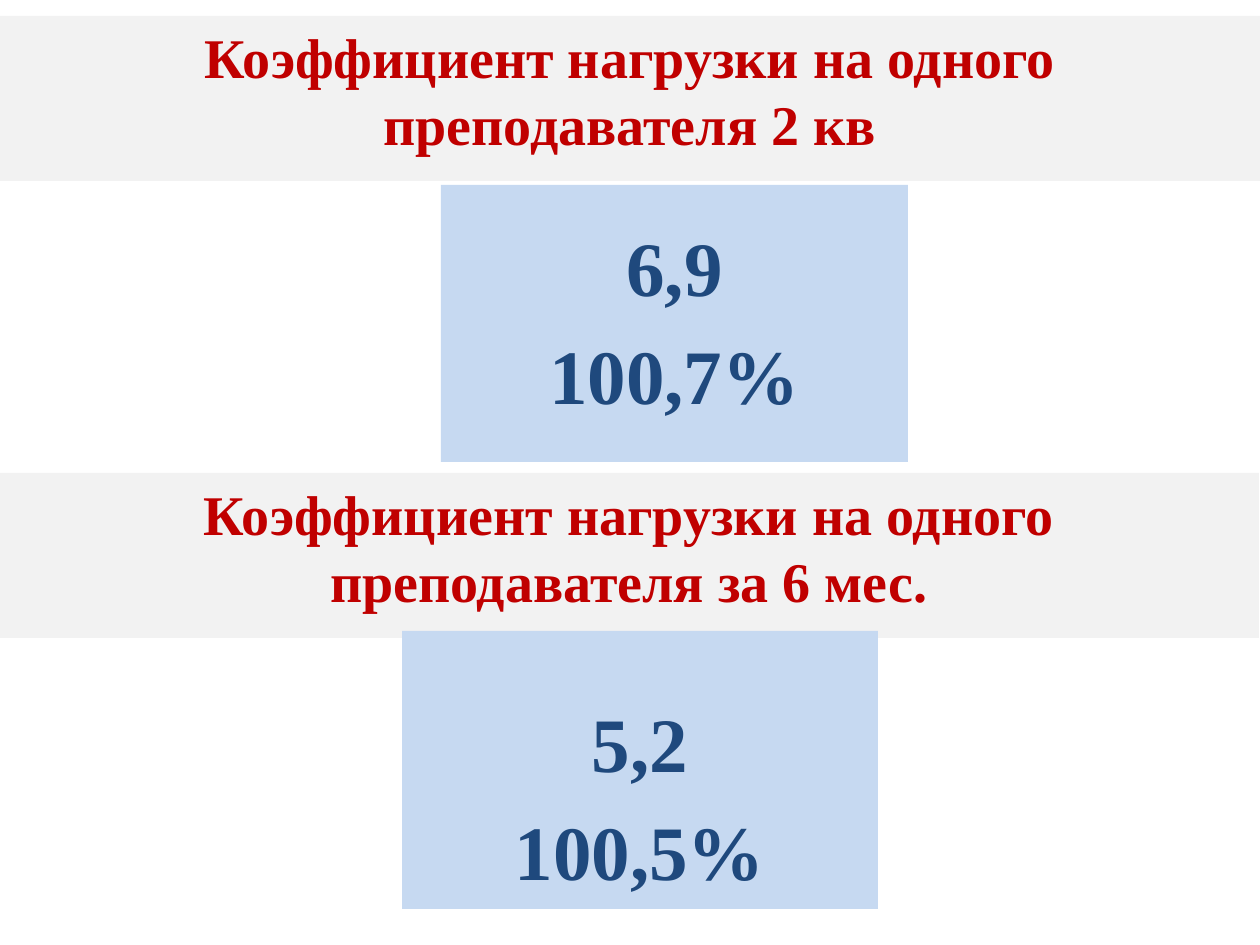
from dataclasses import dataclass

from pptx import Presentation
from pptx import util as u
from pptx.dml.color import RGBColor
from pptx.enum import shapes, text

PX = 914400 // 126  # EMU in one px


@dataclass(frozen=True)
class Theme:
    font: str = "Times New Roman"
    banner: str = "F2F2F2"
    panel: str = "C6D9F1"
    heading: str = "C00000"
    figure: str = "1F497D"
    heading_size: int = 32
    figure_size: int = 44
    figure_gap: float = 8.8


THEME = Theme()


def px(*lengths):
    return [u.Emu(length * PX) for length in lengths]


def add_block(slide, box, color):
    shape = slide.shapes.add_shape(shapes.MSO_SHAPE.RECTANGLE, *px(*box))
    shape.shadow.inherit = False
    shape.fill.solid()
    shape.fill.fore_color.rgb = RGBColor.from_string(color)
    shape.line.fill.background()
    return shape


def write_lines(shape, lines, size, color, gap=0):
    frame = shape.text_frame
    frame.word_wrap = True
    frame.vertical_anchor = text.MSO_ANCHOR.TOP
    for index, line in enumerate(lines):
        paragraph = frame.add_paragraph() if index else frame.paragraphs[0]
        paragraph.alignment = text.PP_ALIGN.CENTER
        if index < len(lines) - 1:
            paragraph.space_after = u.Pt(gap)
        run = paragraph.add_run()
        run.text = line
        run.font.name = THEME.font
        run.font.size = u.Pt(size)
        run.font.bold = True
        run.font.color.rgb = RGBColor.from_string(color)


def add_banner(slide, box, heading):
    banner = add_block(slide, box, THEME.banner)
    write_lines(banner, [heading], THEME.heading_size, THEME.heading)


def add_figures(slide, box, figures):
    shape = slide.shapes.add_textbox(*px(*box))
    shape.text_frame.margin_top = px(114)[0]
    write_lines(shape, figures, THEME.figure_size, THEME.figure, THEME.figure_gap)


def main():
    presentation = Presentation()
    presentation.slide_width, presentation.slide_height = px(1260, 945)
    slide = presentation.slides.add_slide(presentation.slide_layouts[6])

    # Second quarter: the banner lies over the panel
    add_block(slide, (441, 185, 467, 277), THEME.panel)
    add_banner(slide, (0, 16, 1260, 165),
               "Коэффициент нагрузки на одного преподавателя 2 кв")
    add_figures(slide, (441, 106, 467, 357), ["6,9", "100,7%"])

    # Six months: the panel lies over the banner
    add_banner(slide, (-1, 473, 1260, 165),
               "Коэффициент нагрузки на одного преподавателя за 6 мес.")
    add_block(slide, (402, 631, 476, 278), THEME.panel)
    add_figures(slide, (402, 582, 476, 222), ["5,2", "100,5%"])

    presentation.save("out.pptx")


if __name__ == "__main__":
    main()
